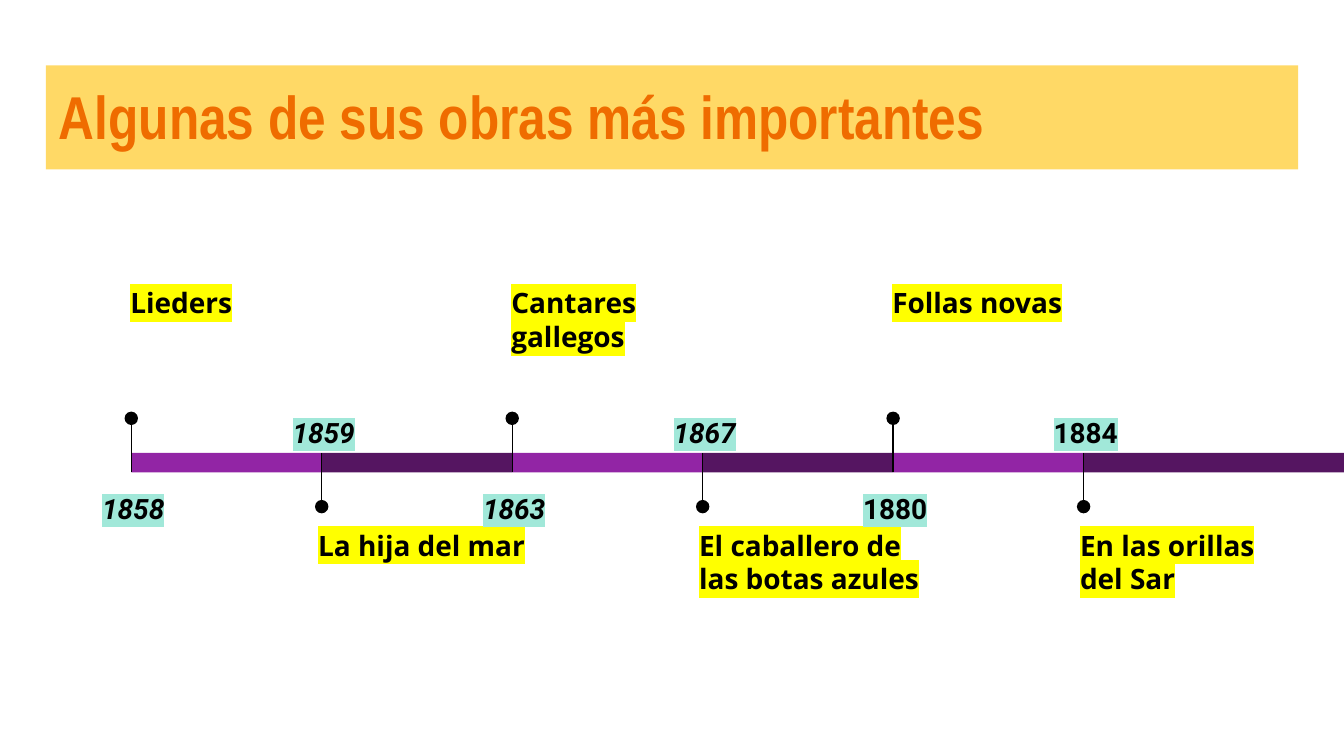
from dataclasses import dataclass

from lxml.etree import SubElement
from pptx import Presentation
from pptx.dml.color import RGBColor
from pptx.enum.shapes import MSO_CONNECTOR, MSO_SHAPE
from pptx.enum.text import MSO_ANCHOR, PP_ALIGN
from pptx.oxml.ns import qn
from pptx.util import Inches, Pt


@dataclass(frozen=True)
class Theme:
    banner: str = "FFD966"
    heading: str = "EF6C00"
    ink: str = "000000"
    bars: tuple = ("9225A5", "551561")
    year_mark: str = "A1E8D9"
    work_mark: str = "FFFF00"
    heading_font: str = "Arial Narrow"
    year_font: str = "Roboto"
    work_font: str = "Open Sans"
    heading_size: float = 32.4
    label_size: float = 15
    line_width: float = 0.75


THEME = Theme()
COLUMNS, ROWS = 100, 56.25
CELL = Inches(0.1)
FIRST, LAST = 9.77, 80.63
BAR_TOP, BAR_HEIGHT = 33.7, 1.45
DOT = 1

WORKS = [
    ("1858", "Lieders", True),
    ("1859", "La hija del mar", True),
    ("1863", "Cantares gallegos", True),
    ("1867", "El caballero de las botas azules", True),
    ("1880", "Follas novas", False),
    ("1884", "En las orillas del Sar", False),
]


def cells(*lengths):
    return [round(length * CELL) for length in lengths]


def add_solid(parent, kind, area, color):
    shape = parent.shapes.add_shape(kind, *cells(*area))
    shape.shadow.inherit = False
    shape.fill.solid()
    shape.fill.fore_color.rgb = RGBColor.from_string(color)
    shape.line.fill.background()
    return shape


def write(box, text, font, size, color, italic=False):
    frame = box.text_frame
    frame.word_wrap = True
    frame.margin_left = frame.margin_right = CELL
    frame.margin_top = frame.margin_bottom = CELL
    frame.text = text
    paragraph = frame.paragraphs[0]
    paragraph.alignment = PP_ALIGN.LEFT
    span = paragraph.runs[0]
    span.font.name = font
    span.font.size = Pt(size)
    span.font.bold = True
    span.font.italic = italic
    span.font.color.rgb = RGBColor.from_string(color)
    return paragraph


def highlight(span, color):
    properties = span.font._element
    mark = SubElement(properties, qn("a:highlight"))
    SubElement(mark, qn("a:srgbClr")).set("val", color)
    properties.find(qn("a:solidFill")).addnext(mark)


def add_label(parent, area, text, font, mark, italic=False):
    box = parent.shapes.add_textbox(*cells(*area))
    paragraph = write(box, text, font, THEME.label_size, THEME.ink, italic)
    paragraph.space_after = Pt(16)
    highlight(paragraph.runs[0], mark)
    return paragraph


def add_stem(parent, column, top, bottom):
    stem = parent.shapes.add_connector(
        MSO_CONNECTOR.STRAIGHT, *cells(column, top, column, bottom))
    stem.line.color.rgb = RGBColor.from_string(THEME.ink)
    stem.line.width = Pt(THEME.line_width)
    SubElement(stem._element.spPr, qn("a:effectLst"))


def add_heading(page, text):
    banner = add_solid(page, MSO_SHAPE.RECTANGLE, (3.41, 4.87, 93.18, 7.73), THEME.banner)
    write(banner, text, THEME.heading_font, THEME.heading_size, THEME.heading)
    banner.text_frame.vertical_anchor = MSO_ANCHOR.TOP


def add_milestone(page, index, year, work, italic):
    pitch = (LAST - FIRST) / (len(WORKS) - 1)
    start = FIRST + index * pitch
    width = pitch if index < len(WORKS) - 1 else COLUMNS - start
    above = index % 2 == 0
    if above:
        year_top, work_top, work_left = 35.2, 20.27, start - 1.05
        dot_top, stem_top, stem_bottom = 30.63, 31.2, 35.1
    else:
        year_top, work_top, work_left = 29.57, 38.3, start - 1.25
        dot_top, stem_top, stem_bottom = 37.2, BAR_TOP, 37.6

    group = page.shapes.add_group_shape()
    add_solid(group, MSO_SHAPE.RECTANGLE, (start, BAR_TOP, width, BAR_HEIGHT),
              THEME.bars[index % 2])
    paragraph = add_label(group, (start - 3.85, year_top, 8, 4.1), year,
                          THEME.year_font, THEME.year_mark, italic)
    paragraph.alignment = PP_ALIGN.CENTER
    paragraph.line_spacing = 1.15
    add_label(group, (work_left, work_top, 18.4, 10.3), work,
              THEME.work_font, THEME.work_mark)
    add_stem(group, start, stem_top, stem_bottom)
    add_solid(group, MSO_SHAPE.OVAL, (start - DOT / 2, dot_top, DOT, DOT), THEME.ink)


def main():
    deck = Presentation()
    deck.slide_width, deck.slide_height = cells(COLUMNS, ROWS)
    page = deck.slides.add_slide(deck.slide_layouts[6])
    add_heading(page, "Algunas de sus obras más importantes")
    for index, (year, work, italic) in enumerate(WORKS):
        add_milestone(page, index, year, work, italic)
    deck.save("out.pptx")


if __name__ == "__main__":
    main()
